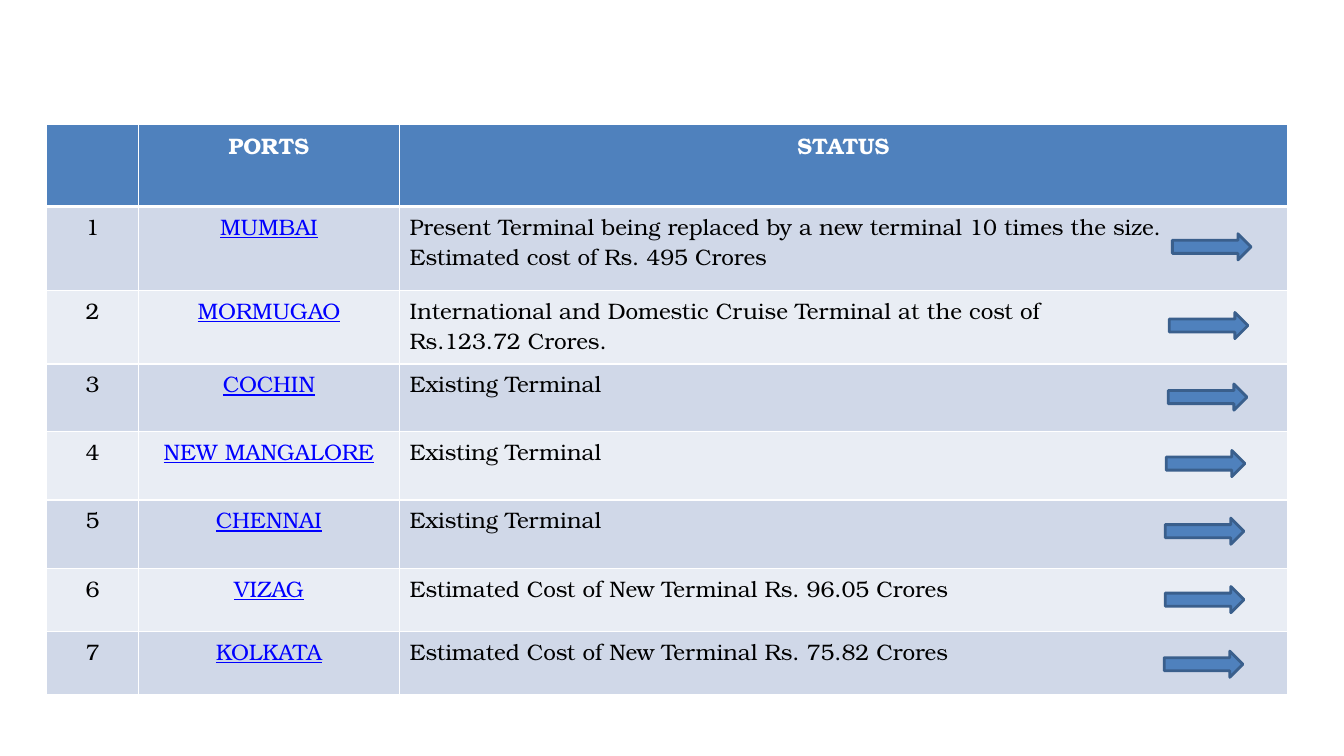
from dataclasses import dataclass

from lxml.etree import SubElement
from pptx import Presentation
from pptx.dml.color import RGBColor
from pptx.enum.shapes import MSO_SHAPE
from pptx.enum.text import PP_ALIGN
from pptx.oxml.ns import qn
from pptx.util import Pt

COLOURS = {
    "header": "4F81BD",
    "odd": "D0D8E8",
    "even": "E9EDF4",
    "border": "FFFFFF",
    "heading": "FFFFFF",
    "text": "000000",
    "port": "0000FF",
    "arrow": "4F81BD",
    "outline": "3A5F8C",
}
BASE_FORMAT = {"name": "TeX Gyre Bonum", "size": Pt(16), "bold": False, "underline": False}
HEADING_FORMAT = BASE_FORMAT | {"bold": True}
PORT_FORMAT = BASE_FORMAT | {"underline": True}
COLUMN_WIDTHS = (65.5, 186.5, 634.3)
HEADINGS = ("", "PORTS", "STATUS")
HEADER_HEIGHT = 59
TABLE_LEFT, TABLE_TOP = 33.4, 88.6
ARROW_WIDTH, ARROW_HEIGHT = 56.2, 18.7


@dataclass(frozen=True)
class Port:
    name: str
    status: tuple[str, ...]
    height: float
    arrow_left: float
    arrow_top: float


PORTS = (
    Port("MUMBAI", ("Present Terminal being replaced by a new terminal 10 times the size.",
                    "Estimated cost of Rs. 495 Crores"), 59.8, 837.4, 167),
    Port("MORMUGAO", ("International and Domestic Cruise Terminal at the cost of",
                      "Rs.123.72 Crores."), 52.6, 835.2, 223.2),
    Port("COCHIN", ("Existing Terminal",), 48.2, 834.5, 274.3),
    Port("NEW MANGALORE", ("Existing Terminal",), 49, 833, 321.8),
    Port("CHENNAI", ("Existing Terminal",), 49, 832.3, 370.1),
    Port("VIZAG", ("Estimated Cost of New Terminal Rs. 96.05 Crores",), 44.8, 832.3, 419),
    Port("KOLKATA", ("Estimated Cost of New Terminal Rs. 75.82 Crores",), 45.2, 831.6, 465.1),
)


def colour(key: str) -> RGBColor:
    return RGBColor.from_string(COLOURS[key])


def write_cell(cell, lines: tuple[str, ...], text_colour: str, text_format: dict,
               alignment: PP_ALIGN) -> None:
    frame = cell.text_frame
    for index, line in enumerate(lines):
        para = frame.add_paragraph() if index else frame.paragraphs[0]
        para.alignment = alignment
        span = para.add_run()
        span.text = line
        for attribute, value in text_format.items():
            setattr(span.font, attribute, value)
        span.font.color.rgb = colour(text_colour)


def paint_cell(cell, fill_colour: str, top_width: float, bottom_width: float) -> None:
    properties = cell._tc.get_or_add_tcPr()
    for side, width in {"L": 1, "R": 1, "T": top_width, "B": bottom_width}.items():
        border = SubElement(properties, qn(f"a:ln{side}"), w=str(Pt(width)))
        fill = SubElement(border, qn("a:solidFill"))
        SubElement(fill, qn("a:srgbClr"), val=COLOURS["border"])
    cell.fill.solid()
    cell.fill.fore_color.rgb = colour(fill_colour)


def add_port_table(page) -> None:
    heights = (HEADER_HEIGHT, *(port.height for port in PORTS))
    table = page.shapes.add_table(
        len(heights), len(COLUMN_WIDTHS), Pt(TABLE_LEFT), Pt(TABLE_TOP),
        Pt(sum(COLUMN_WIDTHS)), Pt(sum(heights))).table
    for column, width in zip(table.columns, COLUMN_WIDTHS):
        column.width = Pt(width)
    for index, (row, height) in enumerate(zip(table.rows, heights)):
        row.height = Pt(height)
        band = "header" if index == 0 else "odd" if index % 2 else "even"
        for cell in row.cells:
            paint_cell(cell, band, 3 if index == 1 else 1, 3 if index == 0 else 1)
    for column, heading in enumerate(HEADINGS):
        if heading:
            write_cell(table.cell(0, column), (heading,), "heading", HEADING_FORMAT,
                       PP_ALIGN.CENTER)
    for number, port in enumerate(PORTS, start=1):
        write_cell(table.cell(number, 0), (str(number),), "text", BASE_FORMAT, PP_ALIGN.CENTER)
        write_cell(table.cell(number, 1), (port.name,), "port", PORT_FORMAT, PP_ALIGN.CENTER)
        write_cell(table.cell(number, 2), port.status, "text", BASE_FORMAT, PP_ALIGN.LEFT)


def add_arrow(page, port: Port) -> None:
    arrow = page.shapes.add_shape(
        MSO_SHAPE.RIGHT_ARROW, Pt(port.arrow_left), Pt(port.arrow_top),
        Pt(ARROW_WIDTH), Pt(ARROW_HEIGHT))
    arrow.shadow.inherit = False
    arrow.fill.solid()
    arrow.fill.fore_color.rgb = colour("arrow")
    arrow.line.color.rgb = colour("outline")
    arrow.line.width = Pt(2)


def main() -> None:
    deck = Presentation()
    deck.slide_width, deck.slide_height = Pt(960), Pt(540)
    page = deck.slides.add_slide(deck.slide_layouts[6])
    add_port_table(page)
    for port in PORTS:
        add_arrow(page, port)
    deck.save("out.pptx")


if __name__ == "__main__":
    main()
